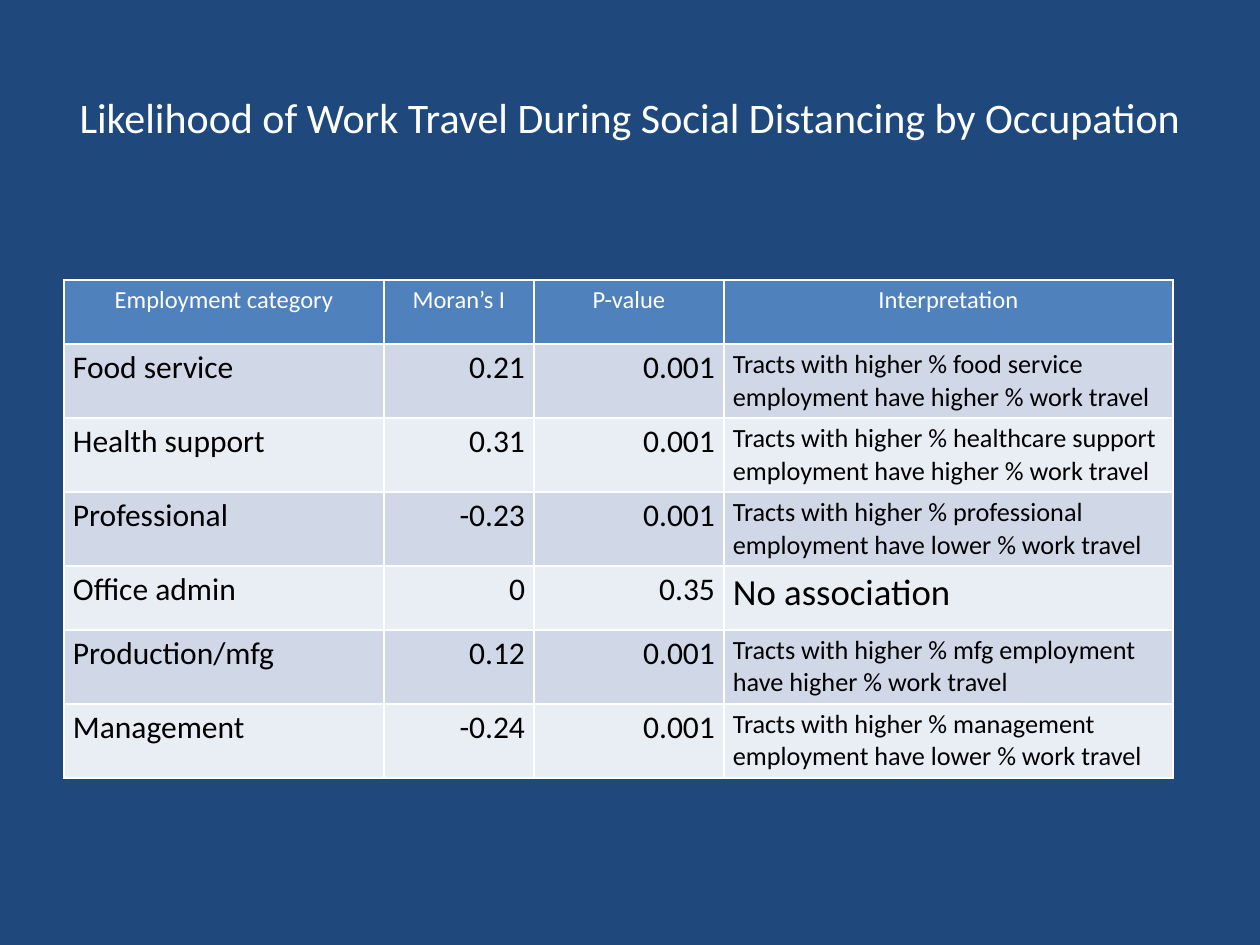
import pptx
import pptx.dml.color
import pptx.enum.text
import pptx.oxml.ns
import pptx.util
import lxml.etree

PX = 914400 / 126
COLORS = {
    "background": "1F497D",
    "header": "4F81BD",
    "odd": "D0D8E8",
    "even": "E9EDF4",
    "white": "FFFFFF",
    "black": "000000",
}
ALIGN = pptx.enum.text.PP_ALIGN


def px(length):
    return pptx.util.Emu(round(length * PX))


def write_text(frame, text, size, color, align=ALIGN.LEFT):
    frame.word_wrap = True
    paragraph = frame.paragraphs[0]
    paragraph.alignment = align
    run = paragraph.add_run()
    run.text = text
    run.font.name = "Calibri"
    run.font.size = pptx.util.Pt(size)
    run.font.bold = False
    run.font.color.rgb = pptx.dml.color.RGBColor.from_string(COLORS[color])


presentation = pptx.Presentation()
presentation.slide_width = px(1260)
presentation.slide_height = px(945)
slide = presentation.slides.add_slide(presentation.slide_layouts[6])
slide.background.fill.solid()
slide.background.fill.fore_color.rgb = pptx.dml.color.RGBColor.from_string(COLORS["background"])

title = slide.shapes.add_textbox(px(63), px(38), px(1134), px(158))
title.text_frame.vertical_anchor = pptx.enum.text.MSO_ANCHOR.MIDDLE
write_text(
    title.text_frame,
    "Likelihood of Work Travel During Social Distancing by Occupation",
    size=24,
    color="white",
    align=ALIGN.CENTER,
)

rows = [
    ("Employment category", "Moran’s I", "P-value", "Interpretation"),
    ("Food service", "0.21", "0.001",
     "Tracts with higher % food service employment have higher % work travel"),
    ("Health support", "0.31", "0.001",
     "Tracts with higher % healthcare support employment have higher % work travel"),
    ("Professional", "-0.23", "0.001",
     "Tracts with higher % professional employment have lower % work travel"),
    ("Office admin", "0", "0.35", "No association"),
    ("Production/mfg", "0.12", "0.001",
     "Tracts with higher % mfg employment have higher % work travel"),
    ("Management", "-0.24", "0.001",
     "Tracts with higher % management employment have lower % work travel"),
]
column_widths = [320, 150, 190, 449]
row_heights = [64, 74, 74, 74, 64, 74, 74]
body_aligns = [ALIGN.LEFT, ALIGN.RIGHT, ALIGN.RIGHT, ALIGN.LEFT]

table = slide.shapes.add_table(
    len(rows), len(column_widths), px(64), px(280), px(sum(column_widths)), px(sum(row_heights))
).table
for column, width in zip(table.columns, column_widths):
    column.width = px(width)

for row_index, (texts, height) in enumerate(zip(rows, row_heights)):
    table.rows[row_index].height = px(height)
    for column_index, text in enumerate(texts):
        cell = table.cell(row_index, column_index)
        cell.margin_left = cell.margin_right = px(9)
        cell.margin_top = cell.margin_bottom = px(5)
        properties = cell._tc.get_or_add_tcPr()
        for side in ("a:lnL", "a:lnR", "a:lnT", "a:lnB"):
            border = lxml.etree.SubElement(properties, pptx.oxml.ns.qn(side), w="12700")
            border_fill = lxml.etree.SubElement(border, pptx.oxml.ns.qn("a:solidFill"))
            lxml.etree.SubElement(border_fill, pptx.oxml.ns.qn("a:srgbClr"), val=COLORS["white"])

        if row_index == 0:
            fill, size, color, align = "header", 14, "white", ALIGN.CENTER
        else:
            fill = "odd" if row_index % 2 else "even"
            size, color, align = 18, "black", body_aligns[column_index]
            if column_index == 3:
                size = 21 if text == "No association" else 15
        cell.fill.solid()
        cell.fill.fore_color.rgb = pptx.dml.color.RGBColor.from_string(COLORS[fill])
        write_text(cell.text_frame, text, size=size, color=color, align=align)

presentation.save("out.pptx")
